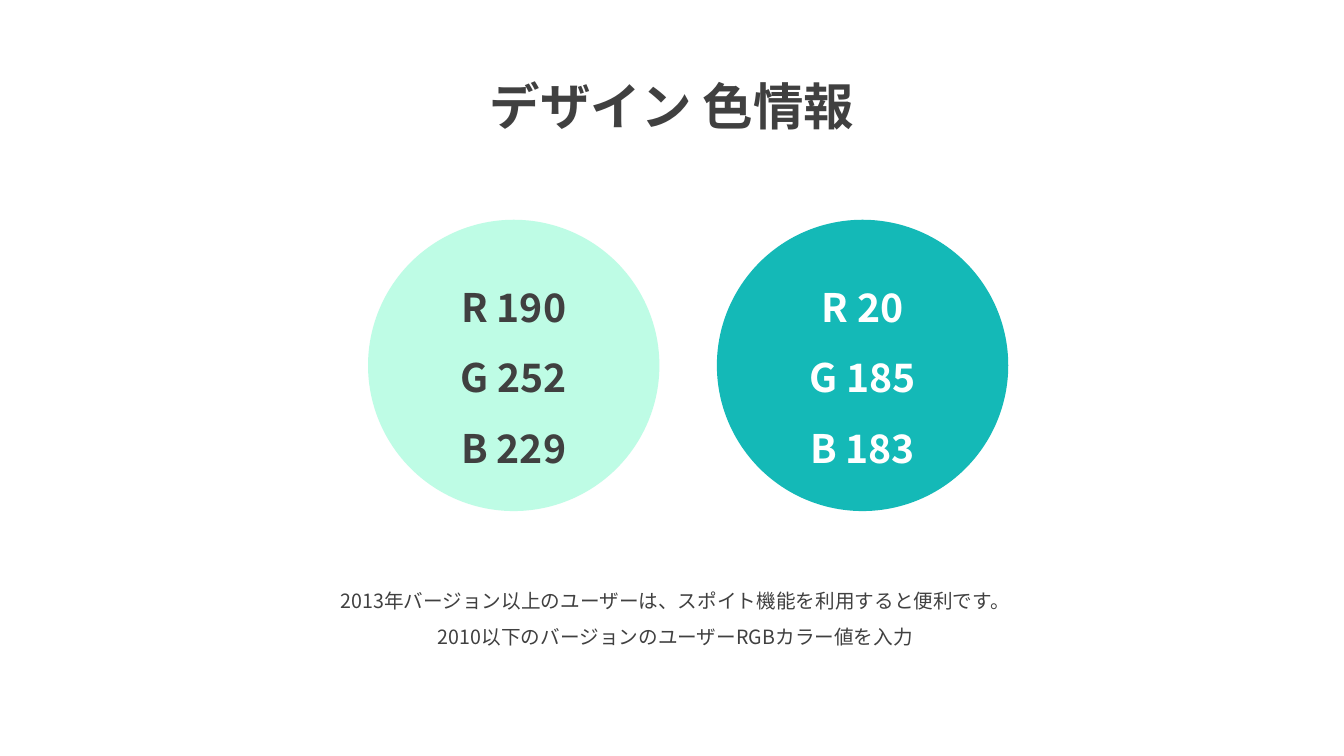
"""Build a slide that lists the RGB values of the two design colours."""
from dataclasses import dataclass

from lxml.etree import SubElement
from pptx import Presentation
from pptx.dml.color import RGBColor as RGB
from pptx.enum.shapes import MSO_SHAPE as Preset
from pptx.enum.text import MSO_ANCHOR as Anchor, MSO_AUTO_SIZE as AutoSize, PP_ALIGN as Align
from pptx.oxml.ns import qn
from pptx.util import Inches, Pt

HEADING = ["デザイン 色情報"]
SWATCHES = [((190, 252, 229), "ink"), ((20, 185, 183), "paper")]
ADVICE = [
    "2013年バージョン以上のユーザーは、スポイト機能を利用すると便利です。",
    "2010以下のバージョンのユーザーRGBカラー値を入力",
]

HEADING_BOX = (4.24, 0.4, 4.85, 0.91)
ADVICE_BOX = (2.52, 5.68, 8.36, 0.77)
SWATCH_LEFT, SWATCH_TOP, DIAMETER, PITCH = 3.65, 2.18, 2.89, 3.46


@dataclass(frozen=True)
class Theme:
    """Hold the colours, font and type sizes."""
    ink: RGB = RGB(64, 64, 64)
    paper: RGB = RGB(255, 255, 255)
    font: str = "Noto Sans CJK KR"
    heading: int = 36
    swatch: int = 28
    advice: int = 14
    spacing: float = 1.5


THEME = Theme()


def write(frame, lines, *, size, color=THEME.ink, bold=False):
    """Fill a text frame with centred lines."""
    frame.word_wrap = True
    for index, line in enumerate(lines):
        paragraph = frame.add_paragraph() if index else frame.paragraphs[0]
        paragraph.alignment = Align.CENTER
        paragraph.line_spacing = THEME.spacing
        run = paragraph.add_run()
        run.text = line
        font = run.font
        font.name, font.size, font.bold = THEME.font, Pt(size), bold
        font.color.rgb = color
        SubElement(run._r.get_or_add_rPr(), qn("a:ea"), typeface=THEME.font)


def add_text(slide, box, lines, **style):
    """Add a text box that grows with its lines."""
    frame = slide.shapes.add_textbox(*map(Inches, box)).text_frame
    write(frame, lines, **style)
    frame.auto_size = AutoSize.SHAPE_TO_FIT_TEXT


def add_swatch(slide, left, channels, ink):
    """Add a circle in a colour, labelled with its channel values."""
    circle = slide.shapes.add_shape(
        Preset.OVAL, *map(Inches, (left, SWATCH_TOP, DIAMETER, DIAMETER)))
    circle.shadow.inherit = False
    circle.fill.solid()
    circle.fill.fore_color.rgb = RGB(*channels)
    circle.line.fill.background()
    circle.text_frame.vertical_anchor = Anchor.MIDDLE
    values = [f"{name} {value}" for name, value in zip("RGB", channels)]
    write(circle.text_frame, values, size=THEME.swatch, color=getattr(THEME, ink), bold=True)


def main():
    """Build and save the slide."""
    deck = Presentation()
    deck.slide_width, deck.slide_height = Inches(13.33), Inches(7.5)
    slide = deck.slides.add_slide(deck.slide_layouts[6])
    for index, (channels, ink) in enumerate(SWATCHES):
        add_swatch(slide, SWATCH_LEFT + index * PITCH, channels, ink)
    add_text(slide, HEADING_BOX, HEADING, size=THEME.heading, bold=True)
    add_text(slide, ADVICE_BOX, ADVICE, size=THEME.advice)
    deck.save("out.pptx")


if __name__ == "__main__":
    main()
